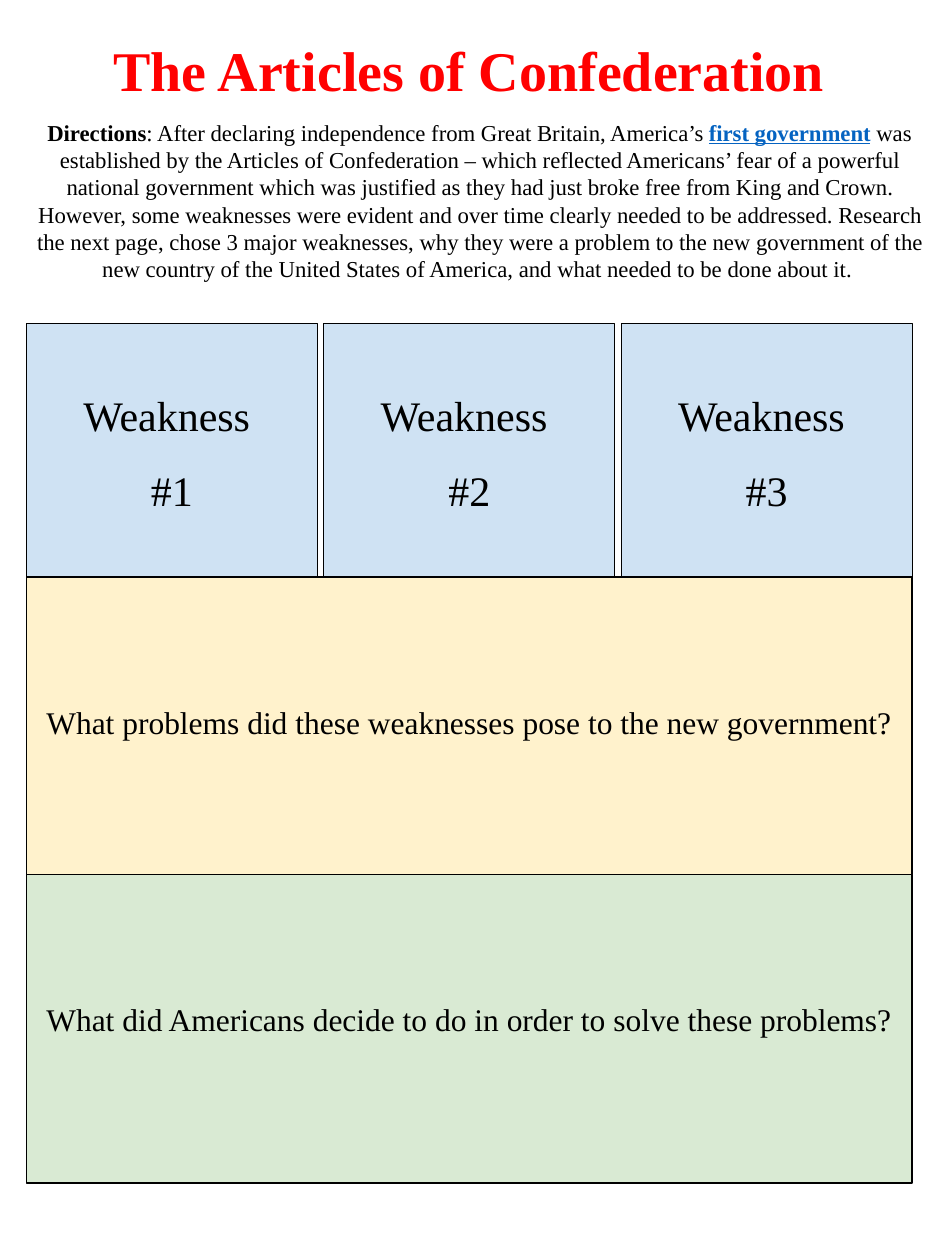
from pptx import Presentation
from pptx.dml.color import RGBColor
from pptx.enum.shapes import MSO_SHAPE
from pptx.enum.text import MSO_ANCHOR, PP_ALIGN
from pptx.util import Inches, Pt

COLORS = {
    "title": "FF0000",
    "text": "000000",
    "link": "0563C1",
    "line": "000000",
    "weakness": "CFE2F3",
    "problem": "FFF2CC",
    "solution": "D9EAD3",
}
FONT = "Times New Roman"


def rgb(name):
    return RGBColor.from_string(COLORS[name])


def set_text(shape, paragraphs, size, color="text", bold=False, spacing=None,
             anchor=MSO_ANCHOR.TOP, side=0.1, top=0.1, bottom=0.1):
    """Fill a shape with centred paragraphs, each a list of (text, run format)."""
    frame = shape.text_frame
    frame.word_wrap = True
    frame.vertical_anchor = anchor
    frame.margin_left = frame.margin_right = Inches(side)
    frame.margin_top, frame.margin_bottom = Inches(top), Inches(bottom)
    for index, runs in enumerate(paragraphs):
        paragraph = frame.add_paragraph() if index else frame.paragraphs[0]
        paragraph.alignment = PP_ALIGN.CENTER
        if spacing:
            paragraph.line_spacing = spacing
        for text, run_format in runs:
            run = paragraph.add_run()
            run.text = text
            run.font.name = FONT
            run.font.size = Pt(size)
            run.font.bold = run_format.get("bold", bold)
            run.font.underline = run_format.get("underline", False)
            run.font.color.rgb = rgb(run_format.get("color", color))


def add_text_box(slide, box, paragraphs, **text_format):
    shape = slide.shapes.add_textbox(*map(Inches, box))
    set_text(shape, paragraphs, **text_format)


def add_panel(slide, box, fill, paragraphs, **text_format):
    shape = slide.shapes.add_shape(MSO_SHAPE.RECTANGLE, *map(Inches, box))
    shape.shadow.inherit = False
    shape.fill.solid()
    shape.fill.fore_color.rgb = rgb(fill)
    shape.line.color.rgb = rgb("line")
    shape.line.width = Pt(0.75)
    set_text(shape, paragraphs, **text_format)


def add_title(slide, box):
    add_text_box(slide, box, [[("The Articles of Confederation", {})]],
                 size=32, color="title", bold=True, top=0.05, bottom=0.05)


def add_directions(slide, box):
    runs = [
        ("Directions", {"bold": True}),
        (": After declaring independence from Great Britain, America’s ", {}),
        ("first government", {"bold": True, "underline": True, "color": "link"}),
        (" was established by the Articles of Confederation – which reflected "
         "Americans’ fear of a powerful national government which was justified "
         "as they had just broke free from King and Crown. However, some "
         "weaknesses were evident and over time clearly needed to be addressed. "
         "Research the next page, chose 3 major weaknesses, why they were a "
         "problem to the new government of the new country of the United States "
         "of America, and what needed to be done about it. ", {}),
    ]
    add_text_box(slide, box, [runs], size=13, anchor=MSO_ANCHOR.MIDDLE, bottom=0.3)


def add_weakness_row(slide, box, count=3, gap=0.05):
    left, top, width, height = box
    panel_width = (width - gap * (count - 1)) / count
    for index in range(count):
        panel_left = left + index * (panel_width + gap)
        add_panel(slide, (panel_left, top, panel_width, height), "weakness",
                  [[("Weakness ", {})], [(f"#{index + 1}", {})]],
                  size=24, spacing=1.5, top=0.32)


def add_question(slide, box, fill, question):
    add_panel(slide, box, fill, [[(question, {})]], size=18, top=1)


def main():
    presentation = Presentation()
    presentation.slide_width, presentation.slide_height = Inches(7.5), Inches(10)
    slide = presentation.slides.add_slide(presentation.slide_layouts[6])

    # Heading
    left, width = 0.21, 7.03
    add_title(slide, (left, 0.23, width, 0.57))
    add_directions(slide, (0.11, 0.8, 7.39, 1.78))

    # Organizer: three weaknesses above two full-width questions
    add_weakness_row(slide, (left, 2.57, width, 2.01))
    add_question(slide, (left, 4.58, width, 2.36), "problem",
                 "What problems did these weaknesses pose to the new government?")
    add_question(slide, (left, 6.94, width, 2.45), "solution",
                 "What did Americans decide to do in order to solve these problems?")

    presentation.save("out.pptx")


if __name__ == "__main__":
    main()
